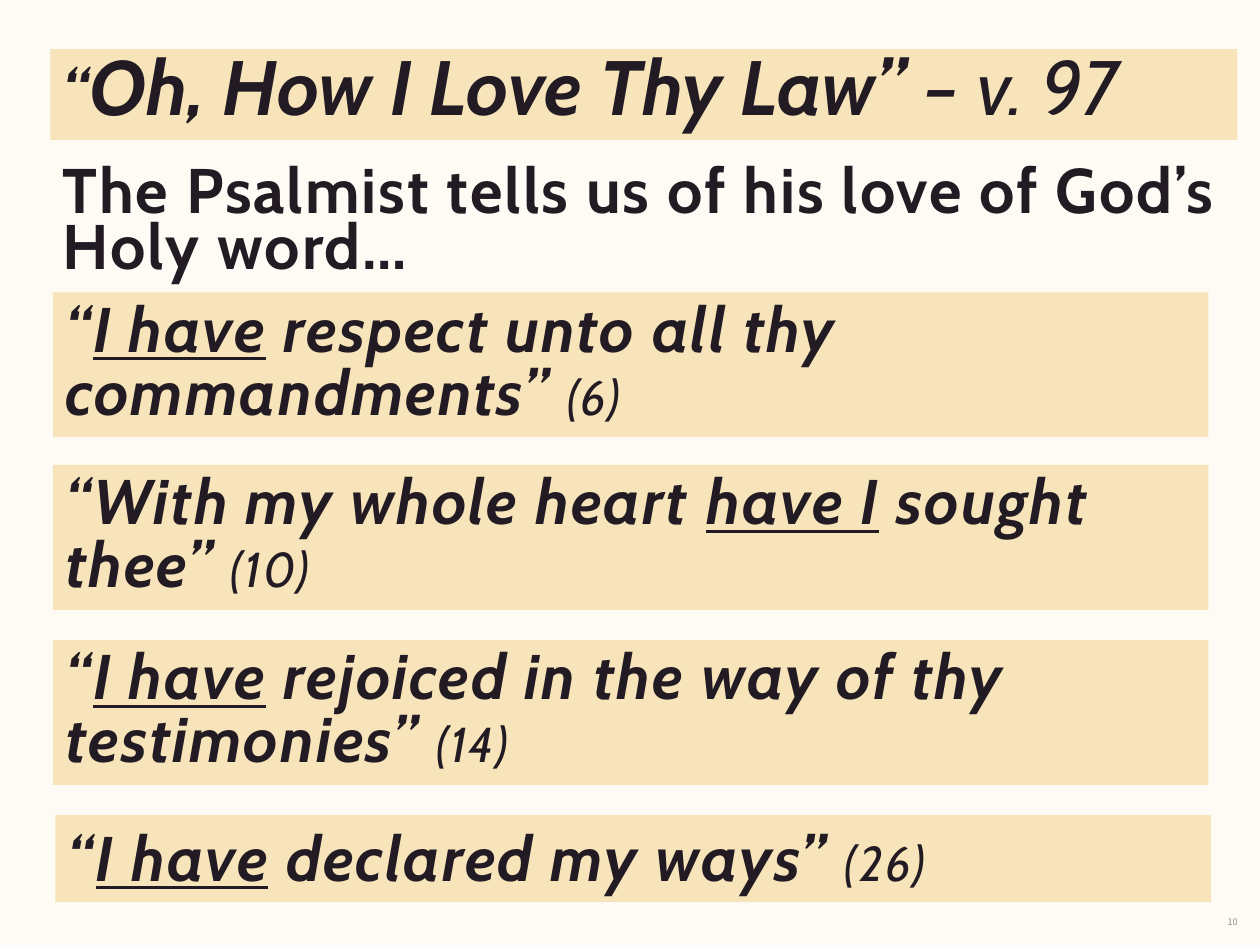
from dataclasses import dataclass

from pptx import Presentation
from pptx import util as u
from pptx.dml.color import RGBColor
from pptx.enum import shapes, text


@dataclass(frozen=True)
class Theme:
    paper: str = "FEFBF5"
    band: str = "F7E4BA"
    ink: str = "231B23"
    muted: str = "8D8D8D"
    font: str = "Cabin"
    number_font: str = "Noto Sans CJK JP"
    heading: float = 44
    heading_quote: float = 37
    body: float = 36
    reference: float = 28
    number: float = 5.2
    tracking: float = 1.1


class VerseSlide:
    """Draws bands and text on one slide in a shared theme."""

    def __init__(self, deck, theme):
        self.theme = theme
        self.page = deck.slides.add_slide(deck.slide_layouts[6])
        fill = self.page.background.fill
        fill.solid()
        fill.fore_color.rgb = RGBColor.from_string(theme.paper)

    def add_words(self, box, runs, leading=None, anchor=text.MSO_ANCHOR.TOP,
                  align=text.PP_ALIGN.LEFT, tracking=0, font=None, color=None):
        frame = box.text_frame
        frame.word_wrap = True
        frame.vertical_anchor = anchor
        para = frame.paragraphs[0]
        para.alignment = align
        if leading:
            para.line_spacing = u.Pt(leading)
        for words, size, bold, italic, underline in runs:
            span = para.add_run()
            span.text = words
            span.font.size = u.Pt(size)
            span.font.name = font or self.theme.font
            span.font.bold, span.font.italic = bold, italic
            span.font.underline = underline
            span.font.color.rgb = RGBColor.from_string(color or self.theme.ink)
            if tracking:
                span._r.get_or_add_rPr().set("spc", str(round(tracking * 100)))

    def label(self, place, runs, **style):
        box = self.page.shapes.add_textbox(*map(u.Inches, place))
        self.add_words(box, runs, **style)

    def band(self, place, runs, **style):
        box = self.page.shapes.add_shape(
            shapes.MSO_SHAPE.RECTANGLE, *map(u.Inches, place))
        box.shadow.inherit = False
        box.fill.solid()
        box.fill.fore_color.rgb = RGBColor.from_string(self.theme.band)
        box.line.fill.background()
        self.add_words(box, runs, **style)

    def verse(self, place, before, stressed, after, reference, leading=36):
        size = self.theme.body
        runs = [(before, size, True, True, False),
                (stressed, size, True, True, True),
                (after, size, True, True, False),
                (reference, self.theme.reference, False, True, False)]
        self.band(place, runs, leading=leading, tracking=self.theme.tracking,
                  anchor=text.MSO_ANCHOR.MIDDLE)


def main():
    deck = Presentation()
    deck.slide_width, deck.slide_height = u.Inches(10), u.Inches(7.5)
    theme = Theme()
    slide = VerseSlide(deck, theme)

    intro = "The Psalmist tells us of his love of God’s Holy word…"
    slide.label((0.4, 1.3, 9.6, 8.77), [(intro, theme.body, True, False, False)],
                leading=32, tracking=theme.tracking)
    slide.label((7.67, 7.19, 2.25, 0.25),
                [("10", theme.number, False, False, False)],
                anchor=text.MSO_ANCHOR.MIDDLE, align=text.PP_ALIGN.RIGHT,
                font=theme.number_font, color=theme.muted)
    slide.band((0.4, 0.39, 9.42, 0.72),
               [("“", theme.heading_quote, True, True, False),
                ("Oh, How I Love Thy Law” ", theme.heading, True, True, False),
                ("– v. 97", theme.heading, False, True, False)], leading=43)

    verses = [
        (2.32, "“", "I have", " respect unto all thy commandments” ", "(6)"),
        (3.69, "“With my whole heart ", "have I", " sought thee” ", "(10)"),
        (5.08, "“", "I have", " rejoiced in the way of thy testimonies” ", "(14)"),
    ]
    for top, *parts in verses:
        slide.verse((0.42, top, 9.17, 1.15), *parts)
    slide.verse((0.44, 6.47, 9.17, 0.69), "“", "I have", " declared my ways” ",
                "(26)", leading=40)

    deck.save("out.pptx")


if __name__ == "__main__":
    main()
